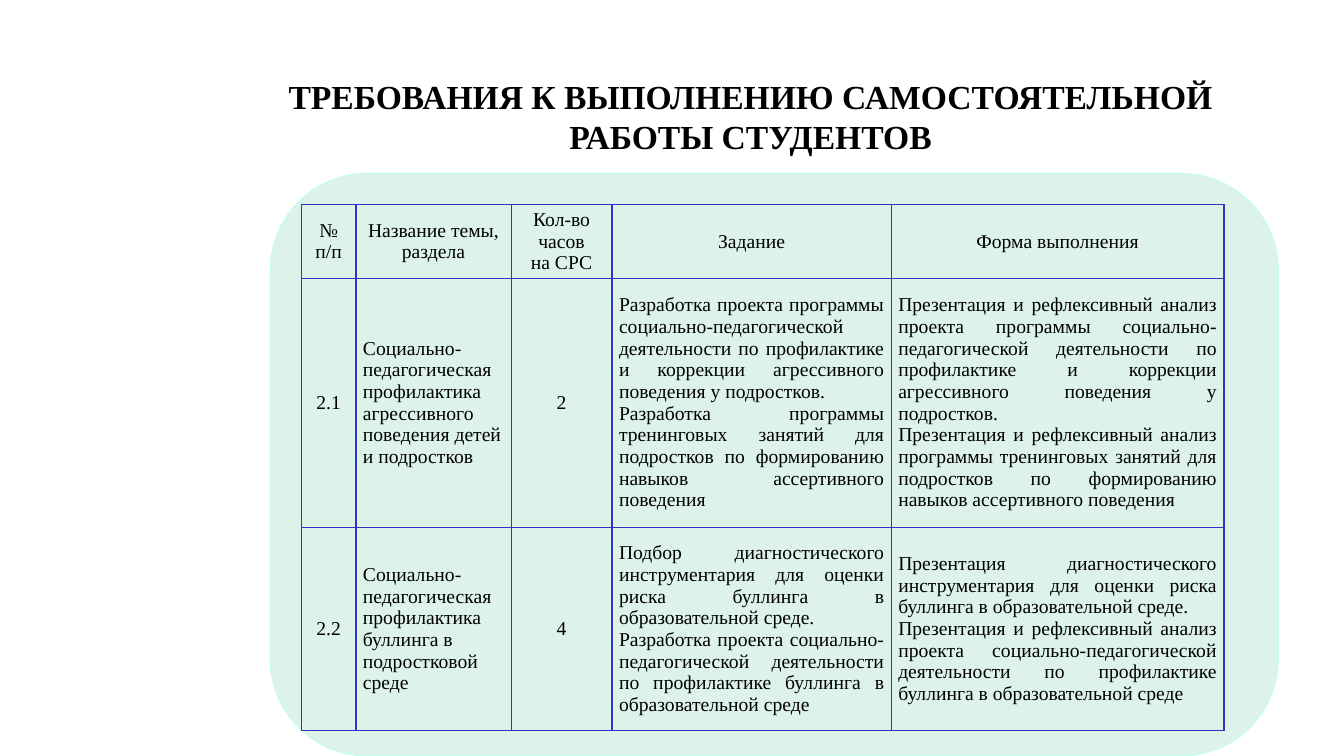
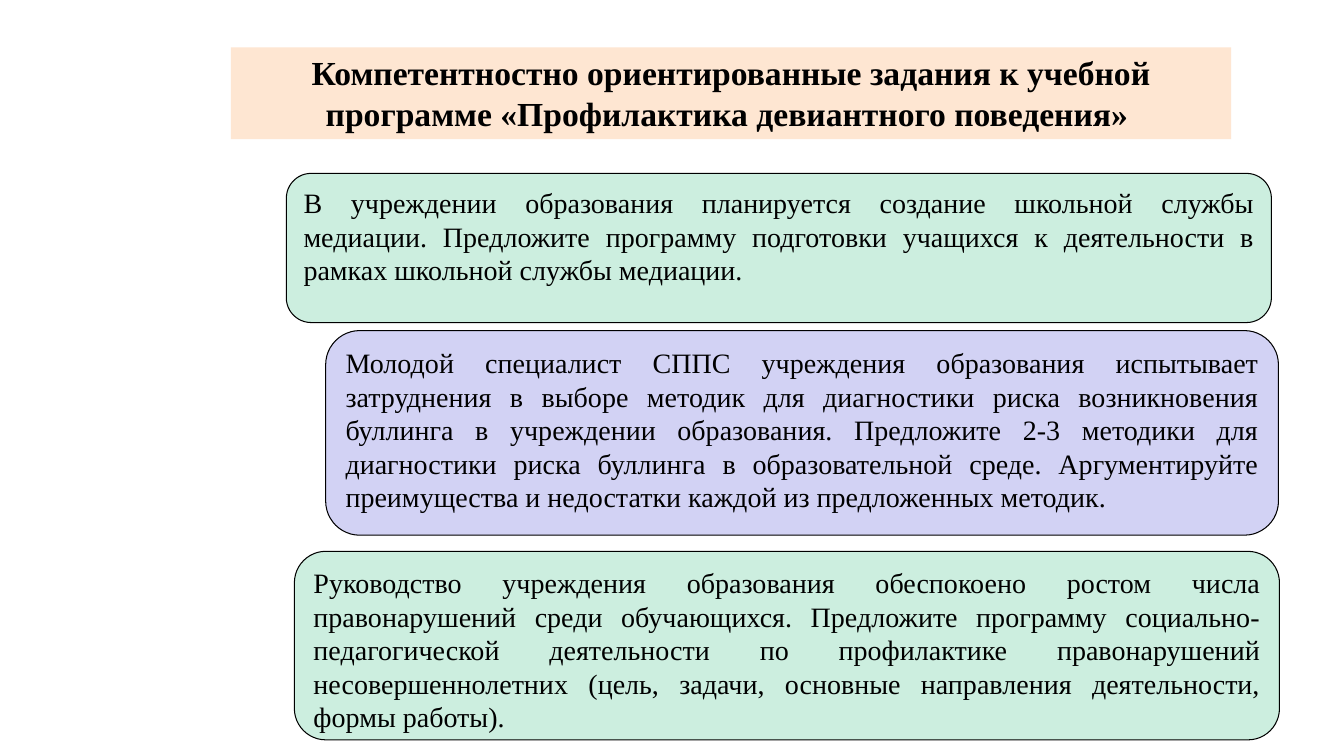
from lxml import etree
from pptx import Presentation
from pptx.dml.color import RGBColor
from pptx.enum.shapes import MSO_SHAPE
from pptx.enum.text import MSO_ANCHOR, MSO_AUTO_SIZE, PP_ALIGN
from pptx.oxml.ns import qn
from pptx.util import Inches, Pt

# Enum members
RECTANGLE, ROUNDED = MSO_SHAPE.RECTANGLE, MSO_SHAPE.ROUNDED_RECTANGLE
LEFT, CENTER, JUSTIFY = PP_ALIGN.LEFT, PP_ALIGN.CENTER, PP_ALIGN.JUSTIFY
TOP, MIDDLE = MSO_ANCHOR.TOP, MSO_ANCHOR.MIDDLE
GROW = MSO_AUTO_SIZE.SHAPE_TO_FIT_TEXT

# Colours
BLACK = RGBColor(0x00, 0x00, 0x00)
PALE_MINT = RGBColor(0xDD, 0xF3, 0xEA)
MINT_EDGE = RGBColor(0xC2, 0xFF, 0xF0)
MINT = RGBColor(0xCC, 0xEE, 0xDF)
LAVENDER = RGBColor(0xD2, 0xD2, 0xF4)
PEACH = RGBColor(0xFE, 0xE6, 0xD2)
GRID_BLUE = RGBColor(0x33, 0x33, 0xCC)

# Text styles
FONT_NAME = "Times New Roman"
TITLE_FONT = {"name": FONT_NAME, "size": Pt(24), "bold": True}
BODY_FONT = {"name": FONT_NAME, "size": Pt(20), "bold": False}
TABLE_FONT = {"name": FONT_NAME, "size": Pt(14), "bold": False}

# Content
TABLE_COLUMNS = [0.54, 1.54, 1, 2.77, 3.3]
TABLE_ROWS = [0.73, 2.47, 2.02]
HEADER_ALIGNMENTS = [CENTER] * 5
BODY_ALIGNMENTS = [CENTER, LEFT, CENTER, JUSTIFY, JUSTIFY]
TABLE_TEXTS = [
    ["№ п/п", "Название темы, раздела", "Кол-во часов\nна СРС", "Задание", "Форма выполнения"],
    [
        "2.1",
        "Социально-педагогическая профилактика агрессивного поведения детей и подростков",
        "2",
        "Разработка проекта программы социально-педагогической деятельности "
        "по профилактике и коррекции агрессивного поведения у подростков.\n"
        "Разработка программы тренинговых занятий для подростков "
        "по формированию навыков ассертивного поведения",
        "Презентация и рефлексивный анализ проекта программы социально-педагогической "
        "деятельности по профилактике и коррекции агрессивного поведения у подростков.\n"
        "Презентация и рефлексивный анализ программы тренинговых занятий для подростков "
        "по формированию навыков ассертивного поведения",
    ],
    [
        "2.2",
        "Социально-педагогическая профилактика буллинга в подростковой среде",
        "4",
        "Подбор диагностического инструментария для оценки риска буллинга "
        "в образовательной среде.\n"
        "Разработка проекта социально-педагогической деятельности "
        "по профилактике буллинга в образовательной среде",
        "Презентация диагностического инструментария для оценки риска буллинга "
        "в образовательной среде.\n"
        "Презентация и рефлексивный анализ проекта социально-педагогической деятельности "
        "по профилактике буллинга в образовательной среде",
    ],
]
TASKS = [
    ((2.84, 1.72, 9.77, 1.48), MINT,
     "В учреждении образования планируется создание школьной службы медиации. "
     "Предложите программу подготовки учащихся к деятельности в рамках школьной "
     "службы медиации."),
    ((3.23, 3.28, 9.45, 2.03), LAVENDER,
     "Молодой специалист СППС учреждения образования испытывает затруднения в выборе "
     "методик для диагностики риска возникновения буллинга в учреждении образования. "
     "Предложите 2-3 методики для диагностики риска буллинга в образовательной среде. "
     "Аргументируйте преимущества и недостатки каждой из предложенных методик."),
    ((2.92, 5.47, 9.77, 1.87), MINT,
     "Руководство учреждения образования обеспокоено ростом числа правонарушений среди "
     "обучающихся. Предложите программу социально-педагогической деятельности по "
     "профилактике правонарушений несовершеннолетних (цель, задачи, основные направления "
     "деятельности, формы работы)."),
]


class Deck:
    def __init__(self):
        self.presentation = Presentation()
        self.presentation.slide_width = Inches(13.33)
        self.presentation.slide_height = Inches(7.5)
        self.slide = None

    def new_slide(self):
        self.slide = self.presentation.slides.add_slide(self.presentation.slide_layouts[6])

    def fill_text(self, frame, text, font, alignment):
        frame.word_wrap = True
        for index, line in enumerate(text.split("\n")):
            paragraph = frame.add_paragraph() if index else frame.paragraphs[0]
            paragraph.alignment = alignment
            run = paragraph.add_run()
            run.text = line
            for name, value in font.items():
                setattr(run.font, name, value)
            run.font.color.rgb = BLACK

    def panel(self, kind, box, fill, line=None):
        shape = self.slide.shapes.add_shape(kind, *map(Inches, box))
        shape.shadow.inherit = False
        shape.fill.solid()
        shape.fill.fore_color.rgb = fill
        if line is None:
            shape.line.fill.background()
        else:
            shape.line.color.rgb = line
            shape.line.width = Pt(0.75)
        return shape

    def title(self, box, text, fill=None):
        if fill is None:
            shape = self.slide.shapes.add_textbox(*map(Inches, box))
        else:
            shape = self.panel(RECTANGLE, box, fill)
        shape.text_frame.vertical_anchor = TOP
        self.fill_text(shape.text_frame, text, TITLE_FONT, CENTER)
        shape.text_frame.auto_size = GROW

    def task(self, box, fill, text):
        shape = self.panel(ROUNDED, box, fill, BLACK)
        shape.text_frame.vertical_anchor = TOP
        self.fill_text(shape.text_frame, text, BODY_FONT, JUSTIFY)

    def borders(self, cell):
        properties = cell._tc.get_or_add_tcPr()
        for side in ("a:lnL", "a:lnR", "a:lnT", "a:lnB"):
            line = etree.SubElement(properties, qn(side), w=str(Pt(1)))
            fill = etree.SubElement(line, qn("a:solidFill"))
            etree.SubElement(fill, qn("a:srgbClr"), val=str(GRID_BLUE))

    def table(self, left, top, widths, heights, texts):
        box = map(Inches, (left, top, sum(widths), sum(heights)))
        table = self.slide.shapes.add_table(len(heights), len(widths), *box).table
        table.horz_banding = False
        table.first_row = False
        for column, width in zip(table.columns, widths):
            column.width = Inches(width)
        cell_format = {
            "vertical_anchor": MIDDLE,
            "margin_left": Inches(0.07),
            "margin_right": Inches(0.07),
            "margin_top": 0,
            "margin_bottom": 0,
        }
        for row_index, row in enumerate(table.rows):
            row.height = Inches(heights[row_index])
            alignments = BODY_ALIGNMENTS if row_index else HEADER_ALIGNMENTS
            for cell, text, alignment in zip(row.cells, texts[row_index], alignments):
                for name, value in cell_format.items():
                    setattr(cell, name, value)
                self.borders(cell)
                cell.fill.background()
                self.fill_text(cell.text_frame, text, TABLE_FONT, alignment)


def main():
    deck = Deck()

    # Requirements table
    deck.new_slide()
    deck.title((2.68, 0.7, 9.53, 0.91),
               "ТРЕБОВАНИЯ К ВЫПОЛНЕНИЮ САМОСТОЯТЕЛЬНОЙ РАБОТЫ СТУДЕНТОВ")
    deck.panel(ROUNDED, (2.68, 1.72, 10, 5.78), PALE_MINT, MINT_EDGE)
    deck.table(2.99, 2.03, TABLE_COLUMNS, TABLE_ROWS, TABLE_TEXTS)

    # Competence tasks
    deck.new_slide()
    deck.title((2.29, 0.47, 9.92, 0.91),
               "Компетентностно ориентированные задания к учебной "
               "программе «Профилактика девиантного поведения» ", PEACH)
    for box, fill, text in TASKS:
        deck.task(box, fill, text)

    deck.presentation.save("out.pptx")


if __name__ == "__main__":
    main()
